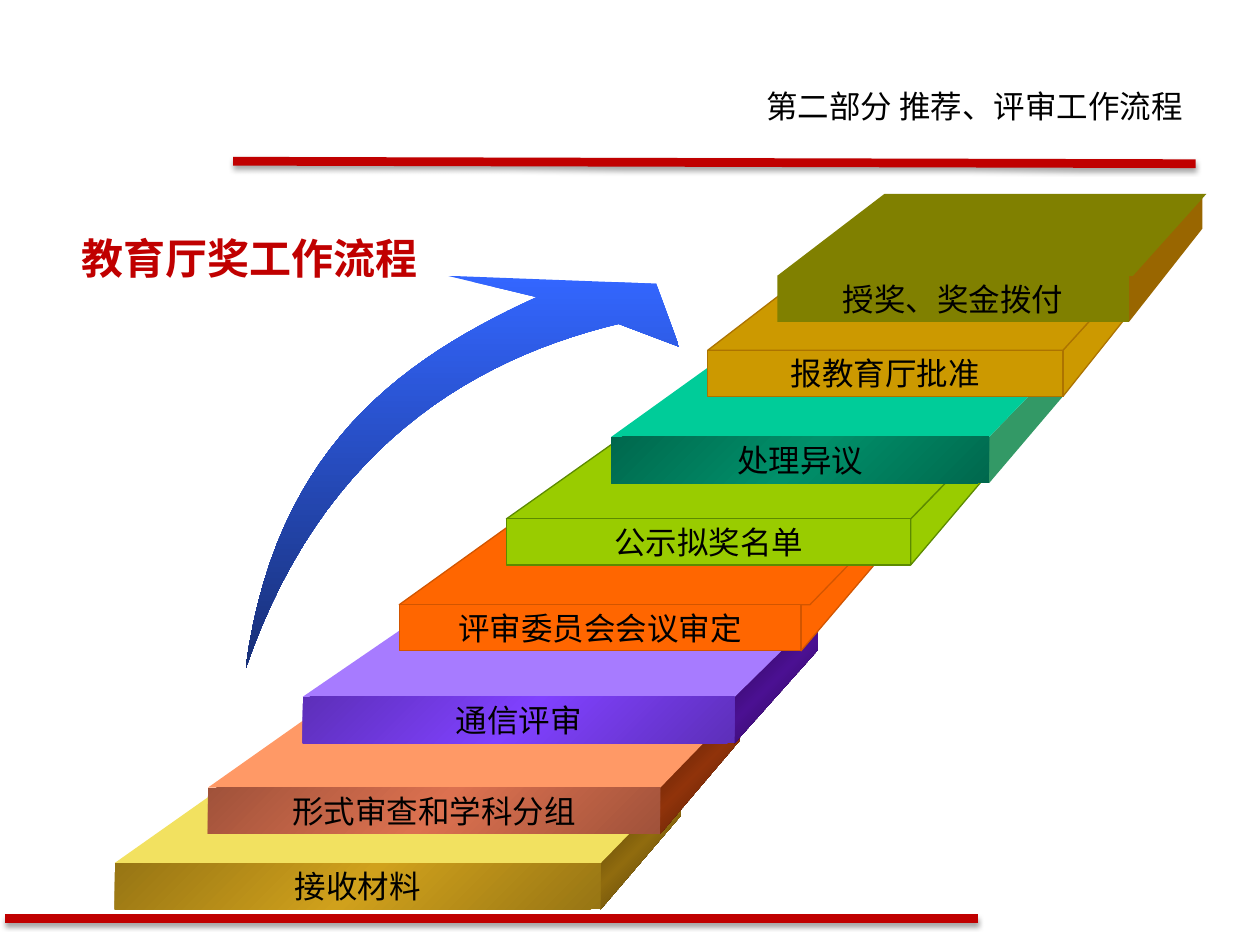
from lxml.etree import SubElement
from pptx import Presentation
from pptx.dml.color import RGBColor
from pptx.enum.shapes import MSO_CONNECTOR, MSO_SHAPE
from pptx.enum.text import MSO_ANCHOR, PP_ALIGN
from pptx.oxml.ns import qn
from pptx.util import Cm, Pt

FONT = "Noto Sans CJK SC"
INK = {
    "red": "C00000", "black": "000000",
    "arrow": ["3366FF", "182F76"],
    "gold": ["977514", "D0A11C", "977514"], "gold top": "F2E160",
    "gold side": ["433206", "906B0E", "433206"],
    "rust": ["A0523A", "DC7150", "A0523A"], "rust top": "FF9966",
    "rust side": ["431805", "90330A", "431805"],
    "plum": ["5D2FB9", "8041FF", "5D2FB9"], "plum top": "A77BFF",
    "plum side": ["230744", "4B1092", "230744"],
    "orange": "FF6600", "orange edge": "D25500",
    "lime": "99CC00", "lime edge": "5C8A00",
    "jade": ["00684D", "00906A", "00684D"], "jade top": "00CC99",
    "jade side": "339966",
    "amber": "CC9900", "amber edge": "AC7300",
    "olive": "808000", "olive side": "996600",
}
# label, hue, front left, front top, front width, shift of back edge,
# depth of side, rise to back edge, extra width of the top at right
STEPS = [
    ("接收材料", "gold", 2.31, 17.4, 9.8, 2.34, 1.61, 1.65, 0),
    ("形式审查和学科分组", "rust", 4.19, 15.88, 9.12, 2.34, 1.6, 1.65, 0),
    ("通信评审", "plum", 6.1, 14.05, 8.71, 2.41, 1.68, 1.65, 0),
    ("评审委员会会议审定", "orange", 8.05, 12.19, 8.1, 2.3, 1.6, 1.65, 0.18),
    ("公示拟奖名单", "lime", 10.21, 10.46, 8.15, 2.26, 1.55, 1.6, 0),
    ("处理异议", "jade", 12.32, 8.81, 7.62, 2.3, 1.6, 1.65, 0),
    ("报教育厅批准", "amber", 14.27, 7.06, 7.16, 2.15, 1.5, 1.65, 0),
    ("授奖、奖金拨付", "olive", 15.67, 5.56, 7.09, 2.16, 1.48, 1.65, 0.08),
]
FRONT = 0.93  # height of a step's front
BACK = 0.7    # height of a step's side at the back


def paint(shape, ink, edge=None, width=0, angle=45):
    """Fill with one colour or, for a list, an even gradient (clockwise angle)."""
    shape.shadow.inherit = False
    fill = shape.fill
    if isinstance(ink, list):
        fill.gradient()
        fill.gradient_angle = 360 - angle
        stops = shape._element.spPr.find(qn("a:gradFill")).find(qn("a:gsLst"))
        for old in list(stops):
            stops.remove(old)
        for i, tone in enumerate(ink):
            stop = SubElement(stops, qn("a:gs"), pos=str(100000 * i // (len(ink) - 1)))
            SubElement(stop, qn("a:srgbClr"), val=tone)
    else:
        fill.solid()
        fill.fore_color.rgb = RGBColor.from_string(ink)
    if edge:
        shape.line.color.rgb = RGBColor.from_string(edge)
        shape.line.width = Pt(width)
    else:
        shape.line.fill.background()


def write(shape, text, size=18, ink="black", bold=False, align=PP_ALIGN.CENTER, wrap=False):
    frame = shape.text_frame
    for key, val in {"word_wrap": wrap, "vertical_anchor": MSO_ANCHOR.MIDDLE}.items():
        setattr(frame, key, val)
    para = frame.paragraphs[0]
    para.alignment = align
    run = para.add_run()
    run.text = text
    for key, val in {"size": Pt(size), "bold": bold, "name": FONT}.items():
        setattr(run.font, key, val)
    run.font.color.rgb = RGBColor.from_string(INK[ink])
    SubElement(run._r.get_or_add_rPr(), qn("a:ea"), typeface=FONT)


def draw(slide, left, top, spots):
    """Add a closed outline whose points are relative to left and top."""
    pts = [(Cm(left + x), Cm(top + y)) for x, y in spots]
    pen = slide.shapes.build_freeform(*pts[0])
    pen.add_line_segments(pts[1:], close=True)
    return pen.convert_to_shape()


def curve(a, b, c, d, count=28):
    """Return points along a cubic Bezier curve."""
    spots = []
    for i in range(count + 1):
        t = i / count
        u = 1 - t
        spots.append(tuple(u**3 * p + 3 * u * u * t * q + 3 * u * t * t * r + t**3 * s
                           for p, q, r, s in zip(a, b, c, d)))
    return spots


def add_rule(slide, x1, y1, x2, y2):
    rule = slide.shapes.add_connector(MSO_CONNECTOR.STRAIGHT, Cm(x1), Cm(y1), Cm(x2), Cm(y2))
    rule.line.color.rgb = RGBColor.from_string(INK["red"])
    rule.line.width = Pt(5)
    effects = SubElement(rule._element.spPr, qn("a:effectLst"))
    shade = SubElement(effects, qn("a:outerShdw"), blurRad=str(Pt(3.1)),
                       dist=str(Pt(1.8)), dir="5400000", rotWithShape="0")
    tone = SubElement(shade, qn("a:srgbClr"), val=INK["black"])
    SubElement(tone, qn("a:alpha"), val="35000")


def add_head(slide, left, top, width, height):
    title = slide.shapes.title
    box = {"left": left, "top": top, "width": width, "height": height}
    for key, val in box.items():
        setattr(title, key, Cm(val))
    write(title, "第二部分 推荐、评审工作流程", align=PP_ALIGN.RIGHT, wrap=True)


def add_name(slide, left, top, width, height):
    box = slide.shapes.add_textbox(Cm(left), Cm(top), Cm(width), Cm(height))
    write(box, "教育厅奖工作流程", 24, "red", True, PP_ALIGN.LEFT)


def add_arrow(slide, left, top):
    outer = curve((0, 7.93), (0.59, 3.48), (3.13, 1.69), (5.87, 0.43))
    head = [(4.07, 0), (8.28, 0.16), (8.74, 1.43)]
    inner = curve((7.52, 0.97), (4.58, 1.68), (1.53, 3.46), (0, 7.93))
    paint(draw(slide, left, top, outer + head + inner[:-1]), INK["arrow"], angle=90)


def add_step(slide, label, hue, left, top, width, shift, depth, rise, extra):
    """Build one stair from its side, top and front; left and top are the front's."""
    base = INK[hue]
    edge = INK.get(hue + " edge")
    end = width + depth
    side = draw(slide, left, top, [(end, BACK - rise), (width, FRONT), (width, 0), (end, -rise)])
    paint(side, INK.get(hue + " side", base), edge)
    lid = draw(slide, left, top, [(width + extra, 0), (0, 0), (shift, -rise), (end + extra, -rise)])
    paint(lid, INK.get(hue + " top", base), edge)
    front = slide.shapes.add_shape(MSO_SHAPE.RECTANGLE, Cm(left), Cm(top), Cm(width), Cm(FRONT))
    paint(front, base, edge, 0.75)
    write(front, label)


def main():
    deck = Presentation()
    deck.slide_width, deck.slide_height = Cm(25.4), Cm(19.05)
    slide = deck.slides.add_slide(deck.slide_layouts[5])
    add_rule(slide, 4.7, 4.08 - 0.83, 24.1, 3.3)
    add_rule(slide, 0.1, 18.52, 19.71, 18.52)
    add_head(slide, 10.64, 1.63, 13.46, 1.02)
    add_arrow(slide, 4.95, 5.56)
    for step in STEPS:
        add_step(slide, *step)
    add_name(slide, 1.4, 4.57, 7.49, 1.27)
    deck.save("out.pptx")


if __name__ == "__main__":
    main()
